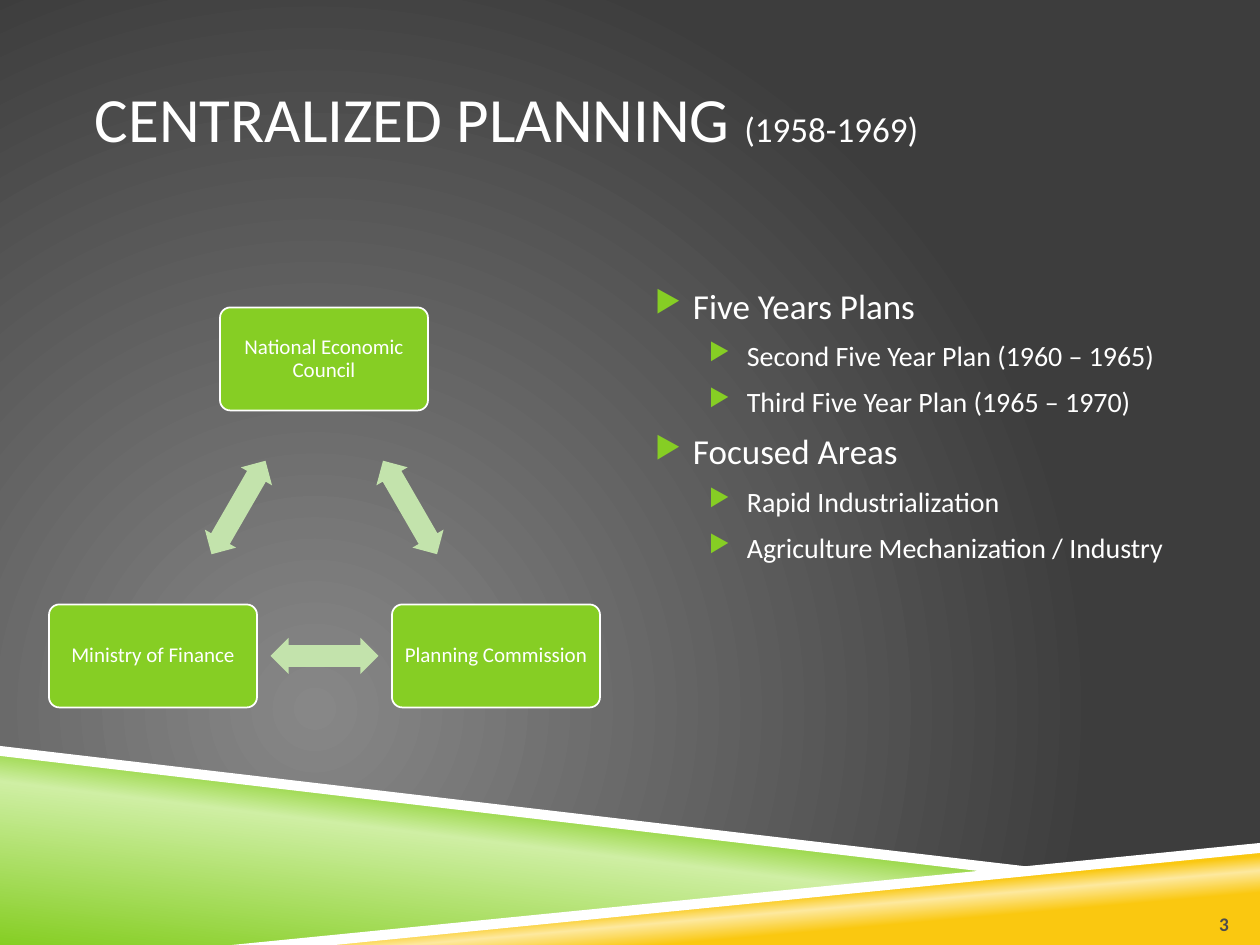
import pptx
import pptx.util
import pptx.dml.color
import pptx.enum.shapes
import pptx.enum.text
import pptx.oxml
import pptx.oxml.ns

PX = 914400 / 126
FONT = "Calibri"

RGB = pptx.dml.color.RGBColor
WHITE = RGB(0xFF, 0xFF, 0xFF)
GREEN = RGB(0x86, 0xCE, 0x24)
PALE_GREEN = RGB(0xCF, 0xEF, 0xA4)
ARROW_GREEN = RGB(0xC3, 0xE3, 0xAC)
YELLOW = RGB(0xFA, 0xC8, 0x10)
PALE_YELLOW = RGB(0xFD, 0xE9, 0x9F)
LIGHT_GREY = RGB(0x87, 0x87, 0x87)
DARK_GREY = RGB(0x3D, 0x3D, 0x3D)
NUMBER_GREY = RGB(0x4D, 0x4D, 0x4D)

SHAPE = pptx.enum.shapes.MSO_SHAPE
ALIGN = pptx.enum.text.PP_ALIGN
ANCHOR = pptx.enum.text.MSO_ANCHOR

BOX_W, BOX_H = 208, 103
ARROW_W, ARROW_H = 108, 36
# Box label and centre, clockwise from the top
BODIES = [
    ("National Economic Council", 324, 359),
    ("Planning Commission", 496, 656),
    ("Ministry of Finance", 153, 656),
]

OUTLINE = [
    (0, "Five Years Plans"),
    (1, "Second Five Year Plan (1960 – 1965)"),
    (1, "Third Five Year Plan (1965 – 1970)"),
    (0, "Focused Areas"),
    (1, "Rapid Industrialization"),
    (1, "Agriculture Mechanization / Industry"),
]
# Size in points and left margin in px for each outline level
LEVELS = [(20, 48), (16, 102)]
BULLET_INDENT = 38


def px(n):
    return pptx.util.Emu(round(n * PX))


def set_all(obj, values):
    for name, value in values.items():
        setattr(obj, name, value)


def place(sp, left, top, width, height):
    set_all(sp, {"left": px(left), "top": px(top),
                 "width": px(width), "height": px(height)})


def format_frame(tf, anchor, left=0, top=6, right=0, bottom=6):
    set_all(tf, {
        "word_wrap": True, "vertical_anchor": anchor,
        "auto_size": pptx.enum.text.MSO_AUTO_SIZE.NONE,
        "margin_left": px(left), "margin_top": px(top),
        "margin_right": px(right), "margin_bottom": px(bottom),
    })


def add_run(p, text, size, color=WHITE, bold=False):
    r = p.add_run()
    r.text = text
    set_all(r.font, {"name": FONT, "size": pptx.util.Pt(size), "bold": bold})
    r.font.color.rgb = color


def set_gradient(parent, stops, direction):
    """Put a gradient in place of the solid fill held by an XML element."""
    marks = "".join(
        f'<a:gs pos="{pos * 1000}"><a:srgbClr val="{color}"/></a:gs>'
        for pos, color in stops)
    solid = parent.find(pptx.oxml.ns.qn("a:solidFill"))
    parent.replace(solid, pptx.oxml.parse_xml(
        f'<a:gradFill {pptx.oxml.ns.nsdecls("a")} rotWithShape="1">'
        f"<a:gsLst>{marks}</a:gsLst>{direction}</a:gradFill>"))


def fill_background(s):
    s.background.fill.solid()
    set_gradient(
        s._element.find(".//" + pptx.oxml.ns.qn("p:bgPr")),
        [(0, LIGHT_GREY), (100, DARK_GREY)],
        '<a:path path="circle"><a:fillToRect l="50000" t="100000" '
        'r="100000" b="50000"/></a:path>')


def add_band(s, points, color=WHITE, stops=None, angle=0):
    builder = s.shapes.build_freeform(*points[0], scale=PX)
    builder.add_line_segments(points[1:], close=True)
    sp = builder.convert_to_shape()
    sp.shadow.inherit = False
    sp.line.fill.background()
    sp.fill.solid()
    sp.fill.fore_color.rgb = color
    if stops:
        set_gradient(sp._element.spPr, stops,
                     f'<a:lin ang="{angle * 60000}" scaled="0"/>')


def add_bands(s):
    add_band(s, [(249, 945), (1260, 847), (1260, 945)], angle=265,
             stops=[(28, YELLOW), (40, PALE_YELLOW), (48, YELLOW)])
    add_band(s, [(0, 752), (998, 872), (252, 945), (0, 945)], angle=277,
             stops=[(0, GREEN), (52, PALE_GREEN), (66, GREEN)])
    add_band(s, [(0, 746), (0, 756), (995, 873), (1048, 869)])
    add_band(s, [(1260, 843), (232, 945), (335, 945), (1260, 853)])


def add_title(s):
    sp = s.shapes.title
    place(sp, 95, 38, 1071, 158)
    format_frame(sp.text_frame, ANCHOR.MIDDLE)
    p = sp.text_frame.paragraphs[0]
    p.alignment = ALIGN.LEFT
    add_run(p, "CENTRALIZED PLANNING ", 36)
    add_run(p, "(1958-1969)", 20)


def add_centred(s, kind, x, y, width, height, color):
    sp = s.shapes.add_shape(kind, px(x - width / 2), px(y - height / 2),
                            px(width), px(height))
    sp.shadow.inherit = False
    sp.fill.solid()
    sp.fill.fore_color.rgb = color
    return sp


def add_box(s, label, x, y):
    sp = add_centred(s, SHAPE.ROUNDED_RECTANGLE, x, y, BOX_W, BOX_H, GREEN)
    sp.adjustments[0] = 0.1
    sp.line.color.rgb = WHITE
    sp.line.width = pptx.util.Pt(1)
    format_frame(sp.text_frame, ANCHOR.MIDDLE, 9, 9, 9, 9)
    p = sp.text_frame.paragraphs[0]
    set_all(p, {"alignment": ALIGN.CENTER, "line_spacing": 0.9})
    add_run(p, label, 12)


def add_arrow(s, x, y, rotation):
    sp = add_centred(s, SHAPE.LEFT_RIGHT_ARROW, x, y, ARROW_W, ARROW_H,
                     ARROW_GREEN)
    sp.adjustments[0] = 0.6
    sp.adjustments[1] = 0.5
    sp.line.fill.background()
    sp.rotation = rotation


def add_cycle(s):
    """Draw each box, then the arrow halfway to the next box."""
    for i, (label, x, y) in enumerate(BODIES):
        _, next_x, next_y = BODIES[(i + 1) % len(BODIES)]
        add_box(s, label, x, y)
        add_arrow(s, (x + next_x) / 2, (y + next_y) / 2, 60 + 120 * i)


def add_bullet(p, margin):
    pPr = p._p.get_or_add_pPr()
    pPr.set("marL", str(px(margin)))
    pPr.set("indent", str(-px(BULLET_INDENT)))
    for tag in (f'<a:buClr %s><a:srgbClr val="{GREEN}"/></a:buClr>',
                '<a:buSzPct %s val="85000"/>',
                '<a:buChar %s char="▶"/>'):
        pPr.append(pptx.oxml.parse_xml(tag % pptx.oxml.ns.nsdecls("a")))


def add_outline(s):
    tf = s.shapes.add_textbox(px(645), px(278), px(564), px(534)).text_frame
    format_frame(tf, ANCHOR.TOP)
    for i, (level, text) in enumerate(OUTLINE):
        p = tf.add_paragraph() if i else tf.paragraphs[0]
        size, margin = LEVELS[level]
        p.level = level
        add_bullet(p, margin)
        p.space_before = pptx.util.Pt(7 if i else 0)
        add_run(p, text, size)


def add_slide_number(s):
    tf = s.shapes.add_textbox(px(1166), px(885), px(63), px(50)).text_frame
    format_frame(tf, ANCHOR.BOTTOM, bottom=0)
    p = tf.paragraphs[0]
    p.alignment = ALIGN.RIGHT
    add_run(p, "3", 11, NUMBER_GREY, bold=True)


def main():
    prs = pptx.Presentation()
    set_all(prs, {"slide_width": px(1260), "slide_height": px(945)})
    s = prs.slides.add_slide(prs.slide_layouts[5])
    fill_background(s)
    add_bands(s)
    add_title(s)
    add_slide_number(s)
    add_cycle(s)
    add_outline(s)
    prs.save("out.pptx")


if __name__ == "__main__":
    main()
